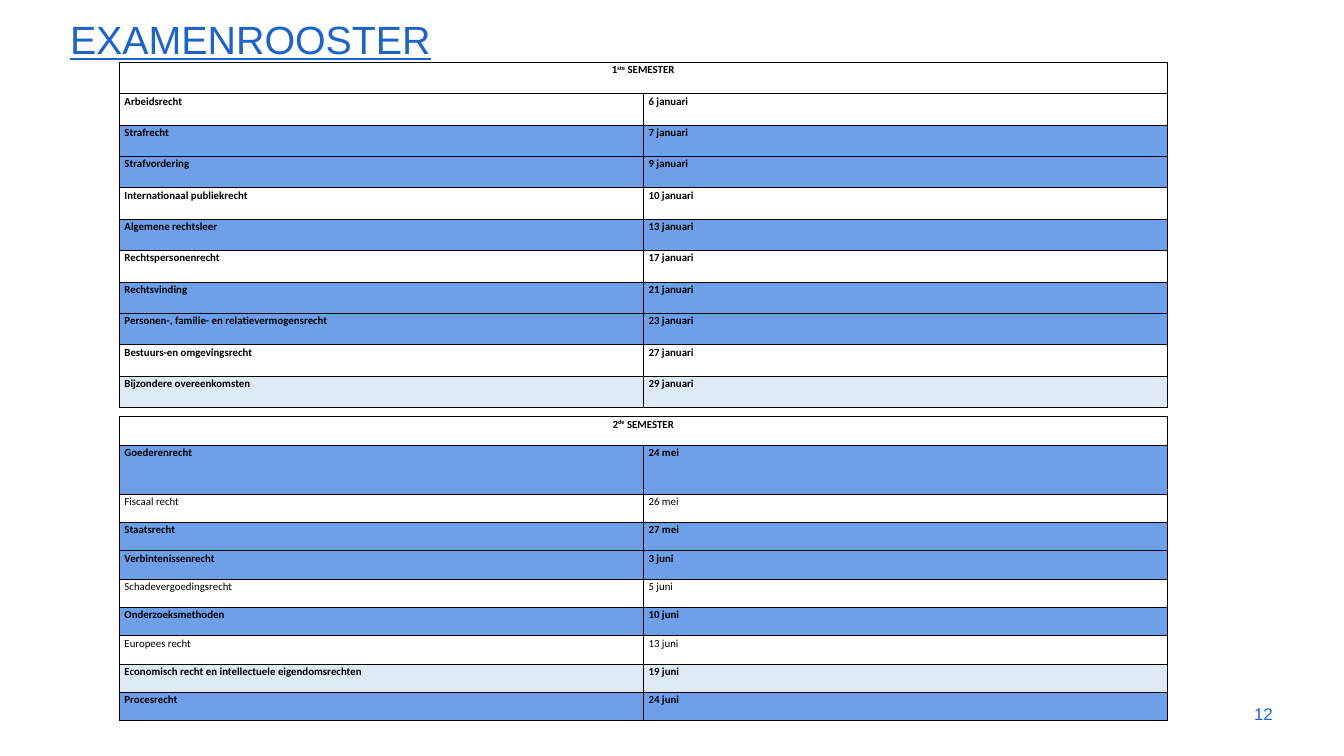
from lxml import etree
from pptx import Presentation
from pptx.dml.color import RGBColor
from pptx.enum.text import MSO_ANCHOR, PP_ALIGN
from pptx.oxml.ns import qn
from pptx.util import Cm, Pt

LEFT, CENTER, RIGHT = PP_ALIGN.LEFT, PP_ALIGN.CENTER, PP_ALIGN.RIGHT
TOP, MIDDLE = MSO_ANCHOR.TOP, MSO_ANCHOR.MIDDLE

COLORS = {
    "title": "1E64C8",
    "text": "000000",
    "border": "000000",
    "blue": "6DA0E9",
    "pale": "DEEAF6",
    "white": "FFFFFF",
}

TABLE_LEFT, TABLE_WIDTH = 4.27, 37.56

# Course, exam date, row fill
SEMESTER_1 = [
    ("Arbeidsrecht", "6 januari", "white"),
    ("Strafrecht", "7 januari", "blue"),
    ("Strafvordering", "9 januari", "blue"),
    ("Internationaal publiekrecht", "10 januari", "white"),
    ("Algemene rechtsleer", "13 januari", "blue"),
    ("Rechtspersonenrecht", "17 januari", "white"),
    ("Rechtsvinding", "21 januari", "blue"),
    ("Personen-, familie- en relatievermogensrecht", "23 januari", "blue"),
    ("Bestuurs-en omgevingsrecht", "27 januari", "white"),
    ("Bijzondere overeenkomsten", "29 januari", "pale"),
]
SEMESTER_2 = [
    ("Goederenrecht", "24 mei", "blue"),
    ("Fiscaal recht", "26 mei", "white"),
    ("Staatsrecht", "27 mei", "blue"),
    ("Verbintenissenrecht", "3 juni", "blue"),
    ("Schadevergoedingsrecht", "5 juni", "white"),
    ("Onderzoeksmethoden", "10 juni", "blue"),
    ("Europees recht", "13 juni", "white"),
    ("Economisch recht en intellectuele eigendomsrechten", "19 juni", "pale"),
    ("Procesrecht", "24 juni", "blue"),
]


def add_run(p, text, size=11, font="Calibri", color="text", bold=False,
            underline=False, superscript=False):
    r = p.add_run()
    r.text = text
    r.font.size = Pt(size)
    r.font.name = font
    r.font.color.rgb = RGBColor.from_string(COLORS[color])
    r.font.bold = bold
    r.font.underline = underline
    if superscript:
        r.font._element.set("baseline", "30000")


def add_text(s, text, left, top, width, height, align=LEFT, anchor=TOP,
             spacing=1.0, **fmt):
    tf = s.shapes.add_textbox(Cm(left), Cm(top), Cm(width), Cm(height)).text_frame
    tf.word_wrap = True
    tf.vertical_anchor = anchor
    tf.margin_left = tf.margin_right = Cm(0.27)
    tf.margin_top = tf.margin_bottom = Cm(0.28)
    p = tf.paragraphs[0]
    p.alignment = align
    p.line_spacing = spacing
    add_run(p, text, **fmt)


def set_borders(cell):
    tcPr = cell._tc.get_or_add_tcPr()
    for side in ("a:lnL", "a:lnR", "a:lnT", "a:lnB"):
        ln = etree.SubElement(tcPr, qn(side), w=str(Pt(1)))
        fill = etree.SubElement(ln, qn("a:solidFill"))
        etree.SubElement(fill, qn("a:srgbClr"), val=COLORS["border"])


def fill_cell(cell, parts, fill, align=LEFT, bold=True):
    """Write (text, superscript) parts into a bordered cell."""
    cell.margin_left = cell.margin_right = Cm(0.19)
    cell.margin_top = cell.margin_bottom = 0
    set_borders(cell)
    cell.fill.solid()
    cell.fill.fore_color.rgb = RGBColor.from_string(COLORS[fill])
    p = cell.text_frame.paragraphs[0]
    p.alignment = align
    p.line_spacing = 1.07
    p.space_after = Pt(8)
    for text, superscript in parts:
        add_run(p, text, bold=bold, superscript=superscript)


def add_schedule(s, number, ordinal, exams, top, height, extra=0, plain_bold=True):
    """Equal rows, with extra height for the first exam."""
    count = len(exams) + 1
    table = s.shapes.add_table(count, 2, Cm(TABLE_LEFT), Cm(top),
                               Cm(TABLE_WIDTH), Cm(height)).table
    table.first_row = table.horz_banding = False
    for column in table.columns:
        column.width = Cm(TABLE_WIDTH / 2)
    for row in table.rows:
        row.height = Cm((height - extra) / count)
    table.rows[1].height += Cm(extra)

    # Heading across both columns
    heading = table.cell(0, 0)
    heading.merge(table.cell(0, 1))
    set_borders(table.cell(0, 1))
    fill_cell(heading, [(number, False), (ordinal, True), (" SEMESTER", False)],
              "white", align=CENTER)

    # Exams
    for i, (course, date, fill) in enumerate(exams, start=1):
        bold = plain_bold or fill != "white"
        for j, text in enumerate((course, date)):
            fill_cell(table.cell(i, j), [(text, False)], fill, bold=bold)


def main():
    prs = Presentation()
    prs.slide_width, prs.slide_height = Cm(48.16), Cm(27.1)
    s = prs.slides.add_slide(prs.slide_layouts[6])

    # Page number and title
    add_text(s, "12", 43.31, 24.87, 2.57, 1.45, align=RIGHT, anchor=MIDDLE,
             size=17.1, font="Arial", color="title")
    add_text(s, "EXAMENROOSTER", 2.24, 0.46, 44.3, 24.41, spacing=0.9,
             size=40, font="Arial", color="title", underline=True)

    # Exam tables
    add_schedule(s, "2", "de", SEMESTER_2, 14.94, 10.9, extra=0.74, plain_bold=False)
    add_schedule(s, "1", "ste", SEMESTER_1, 2.24, 12.37)

    prs.save("out.pptx")


if __name__ == "__main__":
    main()
